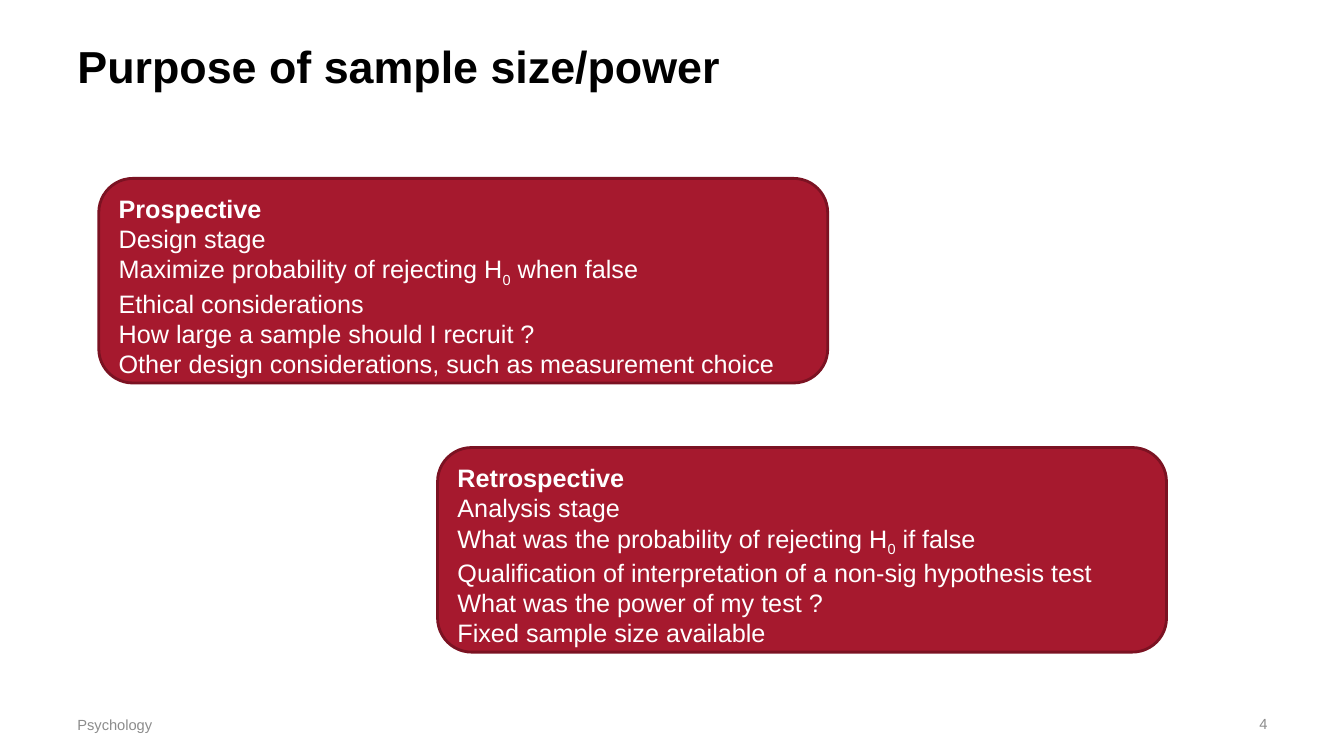
from dataclasses import dataclass

from pptx import Presentation
from pptx.dml.color import RGBColor
from pptx.enum.shapes import MSO_SHAPE
from pptx.enum.text import MSO_ANCHOR, PP_ALIGN
from pptx.slide import Slide
from pptx.text.text import TextFrame
from pptx.util import Inches, Pt

BLACK = RGBColor(0x00, 0x00, 0x00)
WHITE = RGBColor(0xFF, 0xFF, 0xFF)
GRAY = RGBColor(0x8C, 0x8C, 0x8C)
RED = RGBColor(0xA6, 0x19, 0x2E)
DARK = RGBColor(0x7B, 0x12, 0x22)

CARD_WIDTH, CARD_HEIGHT = 7.23, 2.03
SUB = "_"  # the character after this mark is set as a subscript


@dataclass
class Style:
    size: float
    color: RGBColor
    bold: bool = False


@dataclass
class Label:
    text: str
    left: float
    top: float
    width: float
    height: float
    style: Style
    align: PP_ALIGN = PP_ALIGN.LEFT


@dataclass
class Card:
    left: float
    top: float
    head: str
    lines: list[str]


TITLE = Style(32, BLACK, True)
FOOT = Style(10.5, GRAY)
HEAD = Style(18, WHITE, True)
BODY = Style(18, WHITE)

LABELS = [
    Label("Purpose of sample size/power", 0.67, 0.3, 9.34, 0.71, TITLE),
    Label("4", 9.56, 6.98, 3.11, 0.4, FOOT, PP_ALIGN.RIGHT),
    Label("Psychology", 0.67, 6.99, 5.88, 0.4, FOOT),
]

CARDS = [
    Card(0.98, 1.77, "Prospective", [
        "Design stage",
        "Maximize probability of rejecting H_0 when false",
        "Ethical considerations",
        "How large a sample should I recruit ?",
        "Other design considerations, such as measurement choice",
    ]),
    Card(4.34, 4.44, "Retrospective", [
        "Analysis stage",
        "What was the probability of rejecting H_0 if false",
        "Qualification of interpretation of a non-sig hypothesis test",
        "What was the power of my test ?",
        "Fixed sample size available",
    ]),
]


def write(frame: TextFrame, lines: list[tuple[str, Style]],
          align: PP_ALIGN = PP_ALIGN.LEFT) -> None:
    frame.word_wrap = True
    for row, (text, style) in enumerate(lines):
        para = frame.add_paragraph() if row else frame.paragraphs[0]
        para.alignment = align
        start, _, rest = text.partition(SUB)
        for part, base in ((start, 0), (rest[:1], -25000), (rest[1:], 0)):
            if not part:
                continue
            run = para.add_run()
            run.text = part
            run.font.name = "Arial"
            run.font.size = Pt(style.size)
            run.font.bold = style.bold
            run.font.color.rgb = style.color
            if base:
                run._r.get_or_add_rPr().set("baseline", str(base))


def add_label(slide: Slide, label: Label) -> None:
    box = slide.shapes.add_textbox(Inches(label.left), Inches(label.top),
                                   Inches(label.width), Inches(label.height))
    box.text_frame.vertical_anchor = MSO_ANCHOR.MIDDLE
    write(box.text_frame, [(label.text, label.style)], label.align)


def add_card(slide: Slide, card: Card) -> None:
    shape = slide.shapes.add_shape(
        MSO_SHAPE.ROUNDED_RECTANGLE, Inches(card.left), Inches(card.top),
        Inches(CARD_WIDTH), Inches(CARD_HEIGHT))
    shape.shadow.inherit = False
    shape.fill.solid()
    shape.fill.fore_color.rgb = RED
    shape.line.color.rgb = DARK
    shape.line.width = Pt(2)
    shape.text_frame.vertical_anchor = MSO_ANCHOR.TOP
    write(shape.text_frame,
          [(card.head, HEAD)] + [(line, BODY) for line in card.lines])


def main() -> None:
    deck = Presentation()
    deck.slide_width = Inches(13.33)
    deck.slide_height = Inches(7.5)
    slide = deck.slides.add_slide(deck.slide_layouts[6])
    for label in LABELS:
        add_label(slide, label)
    for card in CARDS:
        add_card(slide, card)
    deck.save("out.pptx")


if __name__ == "__main__":
    main()
